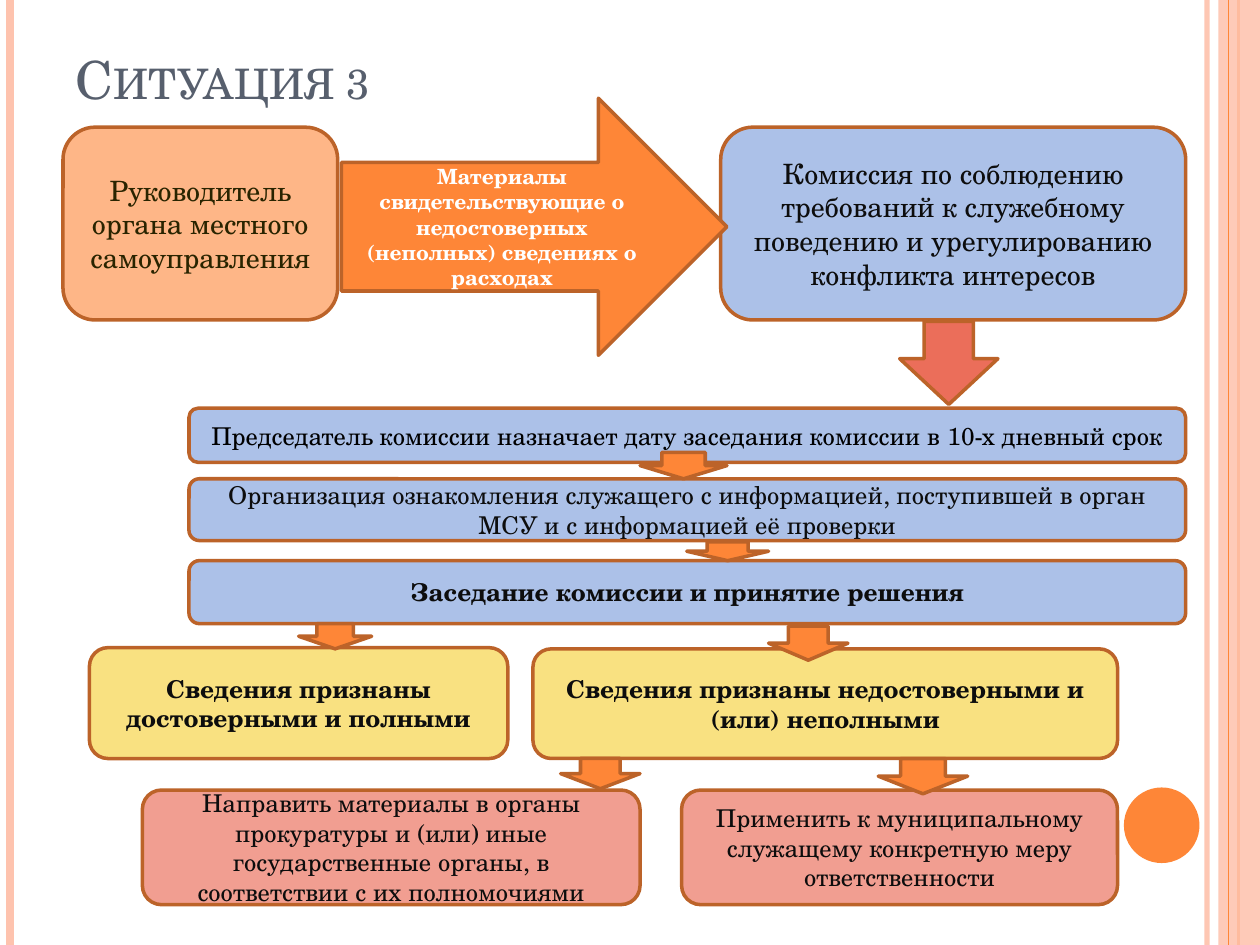
from dataclasses import dataclass

from lxml import etree
from pptx import Presentation
from pptx import util as u
from pptx.dml.color import RGBColor
from pptx.enum import shapes, text
from pptx.oxml.ns import qn

# Grid of 100 columns by 75 rows; every cell is a tenth of an inch.
COLUMNS, ROWS = 100, 75
CELL = u.Inches(0.1)
FONT = "TeX Gyre Schola"
COLOURS = {
    "orange": "FE8637", "peach": "FEB687", "stripe": "FEC3AE", "border": "BC6329",
    "blue": "ACC1E8", "yellow": "F9E181", "pink": "F19E91", "red": "EB6E5A",
    "title": "575F6D", "brown": "292400", "ink": "0D0D0D", "black": "000000",
    "white": "FFFFFF",
}
KIND = shapes.MSO_SHAPE


@dataclass
class Stripe:
    column: float
    colour: str
    points: float
    opacity: int = 100


@dataclass
class Step:
    column: float
    row: float
    columns: float
    rows: float
    fill: str
    wording: str
    size: int = 14
    bold: bool = False
    ink: str = "ink"
    kind: KIND = KIND.ROUNDED_RECTANGLE


@dataclass
class DownArrow:
    column: float
    row: float
    columns: float
    rows: float
    fill: str = "orange"
    head: float = 0.5


STRIPES = [
    Stripe(95.8, "stripe", 3, 93),
    Stripe(0.8, "stripe", 4.5),
    Stripe(98.3, "orange", 1.5),
]
INNER_STRIPE = Stripe(97.5, "orange", 0.75)

STEPS = [
    Step(5, 10.1, 21.8, 15.3, "peach",
         "Руководитель органа местного самоуправления", 16, ink="brown"),
    Step(57.2, 10.1, 36.9, 15.3, "blue",
         "Комиссия по соблюдению требований к служебному поведению "
         "и урегулированию конфликта интересов", 16),
    Step(27.1, 7.8, 30.6, 20.4, "orange",
         "Материалы свидетельствующие о недостоверных (неполных) сведениях о расходах",
         12, True, "white", KIND.RIGHT_ARROW),
    Step(15, 32.4, 79.1, 4.3, "blue",
         "Председатель комиссии назначает дату заседания комиссии в 10-х дневный срок",
         ink="black"),
    Step(15, 38, 79.1, 4.9, "blue",
         "Организация ознакомления служащего с информацией, поступившей в орган МСУ "
         "и с информацией её проверки"),
    Step(15, 44.5, 79.1, 5, "blue", "Заседание комиссии и принятие решения", bold=True),
    Step(7.1, 51.4, 33.2, 8.8, "yellow",
         "Сведения признаны достоверными и полными", bold=True),
    Step(42.3, 51.5, 46.4, 8.7, "yellow",
         "Сведения признаны недостоверными и (или) неполными", bold=True),
    Step(11.3, 62.7, 39.5, 9.1, "pink",
         "Направить материалы в органы прокуратуры и (или) иные государственные органы, "
         "в соответствии с их полномочиями"),
    Step(54.1, 62.7, 34.6, 9.1, "pink",
         "Применить к муниципальному служащему конкретную меру ответственности"),
]

DOWN_ARROWS = [
    DownArrow(71.4, 25.5, 7.8, 6.6, "red", 0.55),
    DownArrow(50.8, 35.9, 6.9, 2.1),
    DownArrow(54.5, 43, 6.5, 1.5),
    DownArrow(23.7, 49.5, 5.8, 2),
    DownArrow(61, 49.7, 6.3, 2.7),
    DownArrow(44.5, 60.2, 6.3, 2.4),
    DownArrow(69.7, 60.2, 7.1, 2.8),
]


def rgb(name: str) -> RGBColor:
    return RGBColor.from_string(COLOURS[name])


def cells(*counts: float) -> list[int]:
    """Turn grid counts into slide lengths."""
    return [round(count * CELL) for count in counts]


def set_opacity(properties, percent: int) -> None:
    colour = next(properties.iter(qn("a:srgbClr")))
    etree.SubElement(colour, qn("a:alpha"), val=str(percent * 1000))


def draw_stripe(slide, stripe: Stripe) -> None:
    line = slide.shapes.add_connector(
        shapes.MSO_CONNECTOR.STRAIGHT, *cells(stripe.column, 0, stripe.column, ROWS))
    line.line.color.rgb = rgb(stripe.colour)
    line.line.width = u.Pt(stripe.points)
    properties = line._element.spPr
    if stripe.opacity < 100:
        set_opacity(properties, stripe.opacity)
    etree.SubElement(properties, qn("a:effectLst"))


def draw_shape(slide, kind: KIND, place: tuple, fill: str, bordered: bool = True):
    shape = slide.shapes.add_shape(kind, *cells(*place))
    shape.shadow.inherit = False
    shape.fill.solid()
    shape.fill.fore_color.rgb = rgb(fill)
    if bordered:
        shape.line.color.rgb = rgb("border")
        shape.line.width = u.Pt(2)
    else:
        shape.line.fill.background()
    return shape


def write(shape, wording: str, size: int, ink: str, bold: bool = False):
    """Fill a shape with one paragraph and return its run."""
    frame = shape.text_frame
    frame.text = wording
    frame.word_wrap = True
    run = frame.paragraphs[0].runs[0]
    run.font.name = FONT
    run.font.size = u.Pt(size)
    run.font.bold = bold
    run.font.color.rgb = rgb(ink)
    return run


def draw_step(slide, step: Step) -> None:
    place = (step.column, step.row, step.columns, step.rows)
    shape = draw_shape(slide, step.kind, place, step.fill)
    write(shape, step.wording, step.size, step.ink, step.bold)
    shape.text_frame.vertical_anchor = text.MSO_ANCHOR.MIDDLE
    shape.text_frame.paragraphs[0].alignment = text.PP_ALIGN.CENTER


def draw_down_arrow(slide, arrow: DownArrow) -> None:
    place = (arrow.column, arrow.row, arrow.columns, arrow.rows)
    shape = draw_shape(slide, KIND.DOWN_ARROW, place, arrow.fill)
    shape.adjustments[1] = arrow.head


def draw_frame(slide) -> None:
    for stripe in STRIPES:
        draw_stripe(slide, stripe)
    band = draw_shape(slide, KIND.RECTANGLE, (96.7, 0, 3.3, ROWS), "stripe", False)
    set_opacity(band._element.spPr, 87)
    draw_stripe(slide, INNER_STRIPE)
    draw_shape(slide, KIND.OVAL, (89.2, 62.5, 6, 6), "orange", False)


def draw_title(slide) -> None:
    title = slide.shapes.add_textbox(*cells(5, 3, 81.7, 6.2))
    run = write(title, "Ситуация 3", 30, "title")
    run.font._element.set("cap", "small")
    title.text_frame.vertical_anchor = text.MSO_ANCHOR.BOTTOM


def main() -> None:
    deck = Presentation()
    deck.slide_width, deck.slide_height = cells(COLUMNS, ROWS)
    slide = deck.slides.add_slide(deck.slide_layouts[6])
    draw_frame(slide)
    draw_title(slide)
    for step in STEPS:
        draw_step(slide, step)
    for arrow in DOWN_ARROWS:
        draw_down_arrow(slide, arrow)
    deck.save("out.pptx")


if __name__ == "__main__":
    main()
